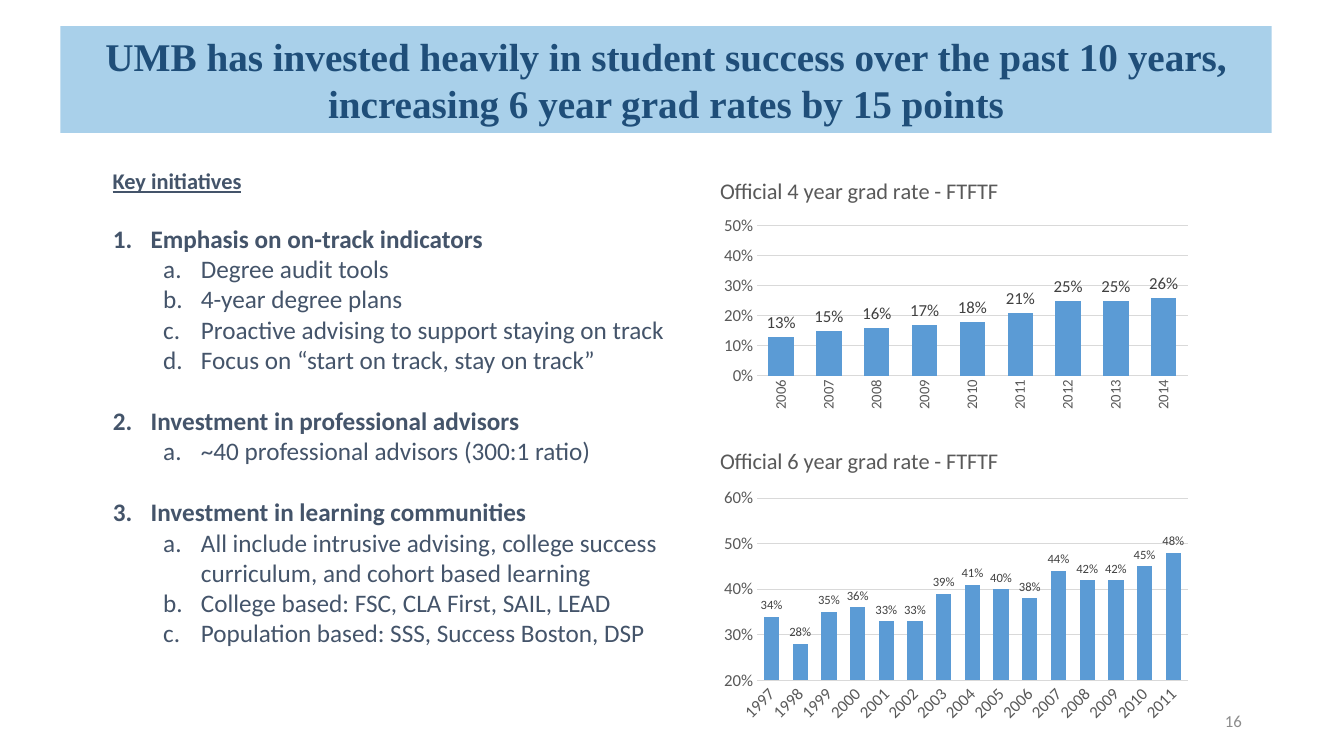
from lxml.etree import SubElement
from pptx import Presentation
from pptx.chart.data import CategoryChartData
from pptx.dml.color import RGBColor
from pptx.enum.chart import XL_CHART_TYPE, XL_LABEL_POSITION, XL_TICK_MARK
from pptx.enum.text import MSO_ANCHOR, MSO_AUTO_SIZE, PP_ALIGN
from pptx.oxml import parse_xml
from pptx.oxml.ns import nsdecls, qn
from pptx.util import Cm, Pt

SLATE, GREY, RULE = "44546A", "595959", "D9D9D9"
INITIATIVES = [
    ("Emphasis on on-track indicators", [
        "Degree audit tools",
        "4-year degree plans",
        "Proactive advising to support staying on track",
        "Focus on “start on track, stay on track”"]),
    ("Investment in professional advisors", [
        "~40 professional advisors (300:1 ratio)"]),
    ("Investment in learning communities", [
        "All include intrusive advising, college success curriculum, "
        "and cohort based learning",
        "College based: FSC, CLA First, SAIL, LEAD",
        "Population based: SSS, Success Boston, DSP"]),
]
FOUR_YEAR = dict(
    title="Official 4 year grad rate - FTFTF", first=2006,
    rates=[.13, .15, .16, .17, .18, .21, .25, .25, .26],
    low=0, high=.5, cat_size=10.5, label_size=12, rotation=-90,
    title_at=(.003, .03), plot_at=(.088, .246, .89, .598))
SIX_YEAR = dict(
    title="Official 6 year grad rate - FTFTF", first=1997,
    rates=[.34, .28, .35, .36, .33, .33, .39, .41, .4, .38, .44, .42, .42, .45, .48],
    low=.2, high=.6, cat_size=12, label_size=9, rotation=-45,
    title_at=(.003, .024), plot_at=(.088, .216, .89, .619))


def rgb(value):
    return RGBColor.from_string(value)


def apply(obj, **values):
    for name, value in values.items():
        setattr(obj, name, value)


def style(font, size, color, name="Calibri", **values):
    apply(font, size=Pt(size), name=name, **values)
    font.color.rgb = rgb(color)


def place(sp, box):
    for name, value in zip(("left", "top", "width", "height"), box):
        setattr(sp, name, Cm(value))


def add_title(s, box, text):
    sp = s.shapes.title
    place(sp, box)
    sp.fill.solid()
    sp.fill.fore_color.rgb = rgb("A9D0EA")
    tf = sp.text_frame
    apply(tf, auto_size=MSO_AUTO_SIZE.NONE, vertical_anchor=MSO_ANCHOR.MIDDLE,
          word_wrap=True)
    p = tf.paragraphs[0]
    p.alignment = PP_ALIGN.CENTER
    r = p.add_run()
    r.text = text
    style(r.font, 28, "1F4E79", "Times New Roman", bold=True)


def add_label(s, box, text, size, color, align=PP_ALIGN.LEFT, **values):
    tf = s.shapes.add_textbox(*map(Cm, box)).text_frame
    apply(tf, word_wrap=True, vertical_anchor=MSO_ANCHOR.MIDDLE)
    p = tf.paragraphs[0]
    p.alignment = align
    r = p.add_run()
    r.text = text
    style(r.font, size, color, **values)


def add_item(p, text, level, number, space):
    pPr = p._p.get_or_add_pPr()
    pPr.set("marL", str(Cm(2.22 if level else .95)))
    pPr.set("indent", str(-Cm(.95)))
    SubElement(pPr, qn("a:buFont"), typeface="+mj-lt")
    scheme = "alphaLcPeriod" if level else "arabicPeriod"
    SubElement(pPr, qn("a:buAutoNum"), type=scheme, startAt=str(number))
    apply(p, level=level, line_spacing=1.0, space_before=Pt(space), space_after=Pt(0))
    r = p.add_run()
    r.text = text
    style(r.font, 18, SLATE, bold=level == 0)


def add_initiatives(s, box, initiatives):
    sp = s.placeholders[1]
    place(sp, box)
    tf = sp.text_frame
    apply(tf, auto_size=MSO_AUTO_SIZE.NONE, word_wrap=True,
          vertical_anchor=MSO_ANCHOR.TOP)
    for number, (heading, details) in enumerate(initiatives, 1):
        p = tf.paragraphs[0] if number == 1 else tf.add_paragraph()
        add_item(p, heading, 0, number, 0 if number == 1 else 22)
        for detail in details:
            add_item(tf.add_paragraph(), detail, 1, 1, 0)


def set_layout(parent, index, values, inner=False):
    for old in parent.findall(qn("c:layout")):
        parent.remove(old)
    layout = parse_xml(f"<c:layout {nsdecls('c')}><c:manualLayout/></c:layout>")
    if inner:
        SubElement(layout[0], qn("c:layoutTarget"), val="inner")
    for tag in ("xMode", "yMode"):
        SubElement(layout[0], qn(f"c:{tag}"), val="edge")
    for tag, value in zip("xywh", values):
        SubElement(layout[0], qn(f"c:{tag}"), val=str(value))
    parent.insert(index, layout)


def add_rate_chart(s, box, title, first, rates, low, high, cat_size, label_size,
                   rotation, title_at, plot_at):
    data = CategoryChartData(number_format="0%")
    data.categories = [str(first + i) for i in range(len(rates))]
    data.add_series("Series 1", rates)
    chart = s.shapes.add_chart(
        XL_CHART_TYPE.COLUMN_CLUSTERED, *map(Cm, box), data).chart
    apply(chart, has_legend=False, has_title=True)
    style(chart.font, 10, "000000")
    p = chart.chart_title.text_frame.paragraphs[0]
    r = p.add_run()
    r.text = title
    style(r.font, 16, GREY, bold=False)

    cat, val = chart.category_axis, chart.value_axis
    for axis, size in ((cat, cat_size), (val, 12)):
        apply(axis, major_tick_mark=XL_TICK_MARK.NONE, minor_tick_mark=XL_TICK_MARK.NONE)
        style(axis.tick_labels.font, size, GREY)
    apply(val, minimum_scale=low, maximum_scale=high, major_unit=.1,
          has_major_gridlines=True)
    apply(val.tick_labels, number_format="0%", number_format_is_linked=False)
    val.format.line.fill.background()
    for line in (cat.format.line, val.major_gridlines.format.line):
        line.width = Pt(.75)
        line.color.rgb = rgb(RULE)

    plot = chart.plots[0]
    apply(plot, gap_width=88, vary_by_categories=False, has_data_labels=True)
    labels = plot.data_labels
    apply(labels, show_value=True, position=XL_LABEL_POSITION.OUTSIDE_END,
          number_format="0%", number_format_is_linked=False)
    style(labels.font, label_size, "404040")
    fill = plot.series[0].format.fill
    fill.solid()
    fill.fore_color.rgb = rgb("5B9BD5")

    root = chart.element
    root.xpath(".//c:catAx/c:txPr/a:bodyPr")[0].set("rot", str(rotation * 60000))
    set_layout(root.xpath("c:chart/c:title")[0], 1, title_at)
    set_layout(root.xpath(".//c:plotArea")[0], 0, plot_at, inner=True)


def main():
    prs = Presentation()
    apply(prs, slide_width=Cm(33.87), slide_height=Cm(19.05))
    s = prs.slides.add_slide(prs.slide_layouts[1])
    add_title(s, (1.52, .66, 30.53, 2.69),
              "UMB has invested heavily in student success over the past 10 years, "
              "increasing 6 year grad rates by 15 points")
    add_label(s, (2.59, 4.09, 9.02, .94), "Key initiatives", 16, SLATE,
              bold=True, underline=True)
    add_initiatives(s, (2.59, 5.5, 14.58, 11), INITIATIVES)
    add_rate_chart(s, (18.01, 4.14, 12.19, 6.32), **FOUR_YEAR)
    add_rate_chart(s, (18.01, 10.95, 12.19, 7.42), **SIX_YEAR)
    add_label(s, (23.93, 17.65, 7.62, 1.02), "16", 12, "8C8C8C", PP_ALIGN.RIGHT)
    prs.save("out.pptx")


if __name__ == "__main__":
    main()
